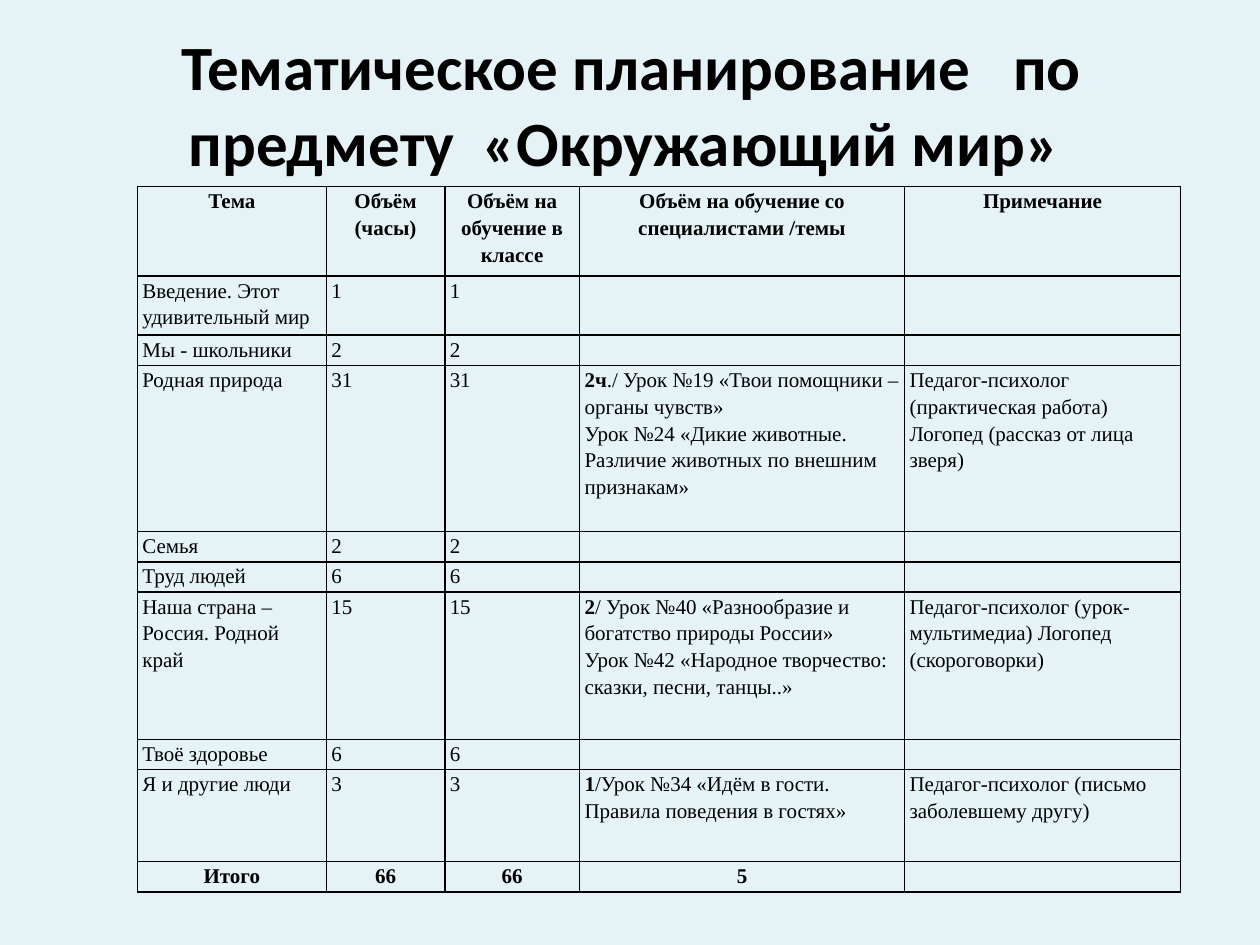
"""Build a slide with the thematic plan of a school subject as a table."""
from lxml import etree
from pptx import Presentation, util as u
from pptx.dml.color import RGBColor
from pptx.enum import text
from pptx.oxml import ns

COLORS = {"background": "E5F3F7", "ink": "000000"}
COLUMN_WIDTHS = [1.5, 0.94, 1.07, 2.58, 2.19]
ROW_HEIGHTS = [0.71, 0.47, 0.24, 1.32, 0.24, 0.24, 1.17, 0.24, 0.73, 0.24]
ROWS = [
    ["Тема", "Объём\n(часы)", "Объём на обучение в классе",
     "Объём на обучение со специалистами /темы", "Примечание"],
    ["Введение. Этот удивительный мир", "1", "1", "", ""],
    ["Мы - школьники", "2", "2", "", ""],
    ["Родная природа", "31", "31",
     "2ч|./ Урок №19 «Твои помощники – органы чувств»\n"
     "Урок №24 «Дикие животные. Различие животных по внешним признакам»",
     "Педагог-психолог (практическая работа)  Логопед (рассказ от лица зверя)"],
    ["Семья", "2", "2", "", ""],
    ["Труд людей", "6", "6", "", ""],
    ["Наша страна – Россия. Родной край", "15", "15",
     "2|/ Урок №40 «Разнообразие и богатство природы России»\n"
     "Урок №42 «Народное творчество: сказки, песни, танцы..»",
     "Педагог-психолог (урок-мультимедиа) Логопед (скороговорки)"],
    ["Твоё здоровье", "6", "6", "", ""],
    ["Я и другие люди", "3", "3",
     "1|/Урок №34 «Идём в гости. Правила поведения в гостях»",
     "Педагог-психолог (письмо заболевшему другу)"],
    ["Итого", "66", "66", "5", ""],
]


def format_span(span, name, size, bold):
    span.font.name = name
    span.font.size = u.Pt(size)
    span.font.bold = bold
    span.font.color.rgb = RGBColor.from_string(COLORS["ink"])


def add_borders(cell):
    properties = cell._tc.get_or_add_tcPr()
    for index, side in enumerate(("lnL", "lnR", "lnT", "lnB")):
        line = etree.Element(ns.qn(f"a:{side}"), w=str(u.Pt(1)))
        fill = etree.SubElement(line, ns.qn("a:solidFill"))
        etree.SubElement(fill, ns.qn("a:srgbClr"), val=COLORS["ink"])
        properties.insert(index, line)


deck = Presentation()
deck.slide_width = u.Inches(10)
deck.slide_height = u.Inches(7.5)
page = deck.slides.add_slide(deck.slide_layouts[5])
page.background.fill.solid()
page.background.fill.fore_color.rgb = RGBColor.from_string(COLORS["background"])

title = page.shapes.title
title.left, title.top = u.Inches(0.51), u.Inches(0.31)
title.width, title.height = u.Inches(9), u.Inches(1.02)
title.text_frame.text = "Тематическое планирование   по предмету  «Окружающий мир» "
title.text_frame.auto_size = text.MSO_AUTO_SIZE.NONE
title.text_frame.vertical_anchor = text.MSO_ANCHOR.MIDDLE
title.text_frame.paragraphs[0].alignment = text.PP_ALIGN.CENTER
format_span(title.text_frame.paragraphs[0].runs[0], "Calibri", 36, True)

table = page.shapes.add_table(
    len(ROWS), len(COLUMN_WIDTHS), u.Inches(1.09), u.Inches(1.48),
    u.Inches(sum(COLUMN_WIDTHS)), u.Inches(sum(ROW_HEIGHTS))).table
table.first_row = False
table.horz_banding = False
for column, width in zip(table.columns, COLUMN_WIDTHS):
    column.width = u.Inches(width)

for row_index, (values, height) in enumerate(zip(ROWS, ROW_HEIGHTS)):
    table.rows[row_index].height = u.Inches(height)
    heading = row_index in (0, len(ROWS) - 1)
    for column_index, value in enumerate(values):
        cell = table.cell(row_index, column_index)
        cell.margin_left = cell.margin_right = u.Inches(0.04)
        cell.margin_top = cell.margin_bottom = 0
        cell.fill.background()
        add_borders(cell)
        cell.text_frame.text = value.replace("|", "")
        for para, line in zip(cell.text_frame.paragraphs, value.split("\n")):
            para.line_spacing = 1.15
            para.alignment = text.PP_ALIGN.CENTER if heading else text.PP_ALIGN.LEFT
            lead, mark, rest = line.partition("|")
            if mark:
                para.text = lead
                para.add_run().text = rest
            for span_index, span in enumerate(para.runs):
                bold = heading or (bool(mark) and span_index == 0)
                format_span(span, "Times New Roman", 12, bold)
            if not line:
                etree.SubElement(para._p, ns.qn("a:endParaRPr"), sz="1200")

deck.save("out.pptx")
